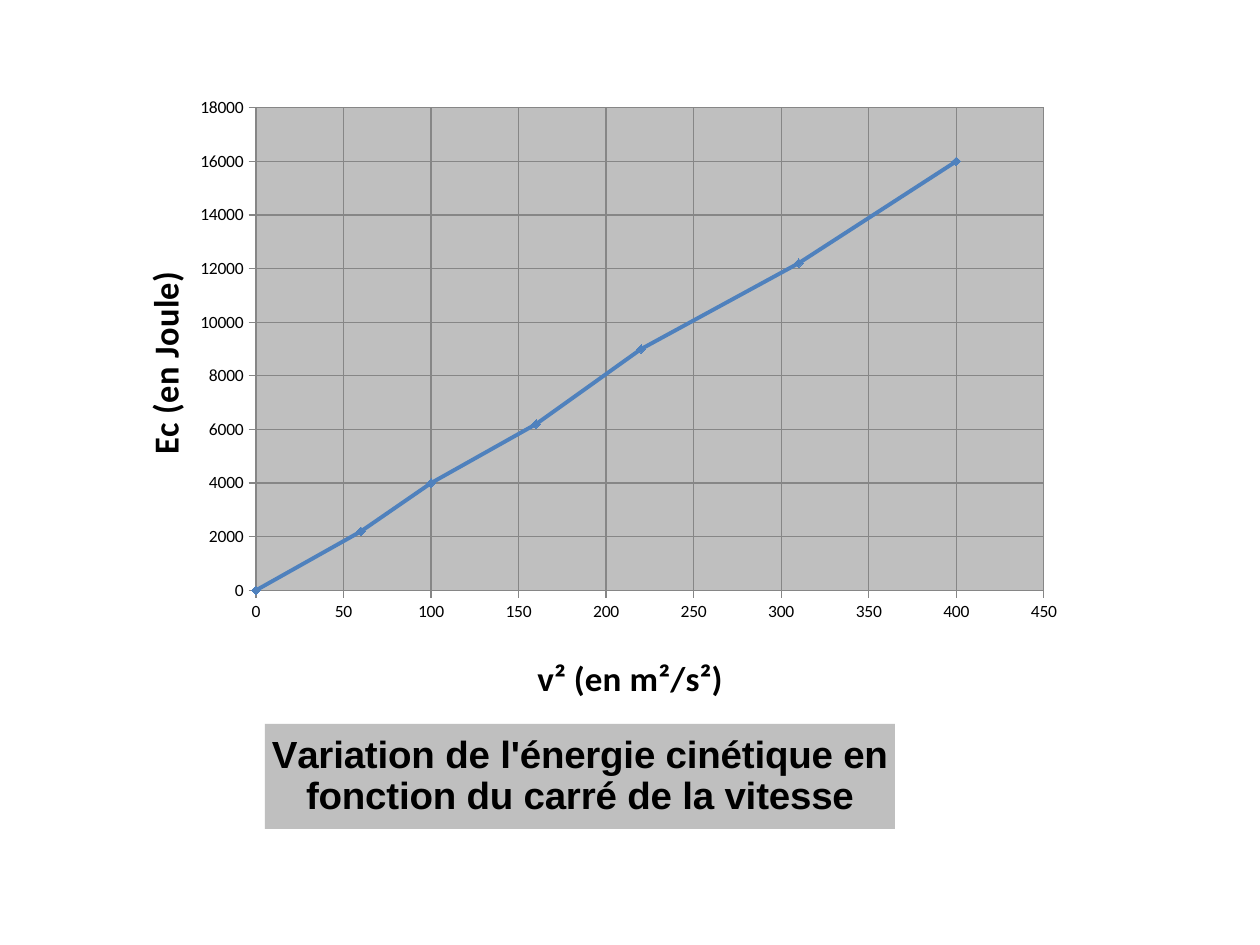
"""Build a slide with a scatter chart of kinetic energy against squared speed."""
from dataclasses import dataclass

from lxml import etree
from pptx import Presentation
from pptx.chart.data import XyChartData
from pptx.dml.color import RGBColor
from pptx.enum.chart import XL_CHART_TYPE, XL_MARKER_STYLE, XL_TICK_MARK
from pptx.oxml.ns import qn
from pptx.util import Pt

PX = 914400 // 126
SCATTER_LINES = XL_CHART_TYPE.XY_SCATTER_LINES
DIAMOND = XL_MARKER_STYLE.DIAMOND
TICK_OUTSIDE, TICK_NONE = XL_TICK_MARK.OUTSIDE, XL_TICK_MARK.NONE
COLORS = {"text": "000000", "panel": "BFBFBF", "grid": "868686", "series": "4F81BD"}
CHART_LEFT, CHART_TOP, CHART_WIDTH, CHART_HEIGHT = 134, 45, 948, 784
PLOT_LEFT, PLOT_TOP, PLOT_WIDTH, PLOT_HEIGHT = 256, 109, 788, 492
POINTS = [(0, 0), (60, 2200), (100, 4000), (160, 6200),
          (220, 9000), (310, 12200), (400, 16000)]


@dataclass
class AxisStyle:
    title: str
    maximum: int
    step: int
    left: int
    top: int
    rotation: int


HORIZONTAL = AxisStyle("v² (en m²/s²)", 450, 50, 531, 659, 0)
VERTICAL = AxisStyle("Ec (en Joule)", 18000, 2000, 134, 273, -5400000)


def color(name: str) -> RGBColor:
    return RGBColor.from_string(COLORS[name])


def place(element, index: int, left: int, top: int, **values) -> None:
    layout = element.find(qn("c:layout"))
    if layout is None:
        layout = etree.Element(qn("c:layout"))
        element.insert(index, layout)
    manual = etree.SubElement(layout, qn("c:manualLayout"))
    target = values.pop("layoutTarget", None)
    if target:
        etree.SubElement(manual, qn("c:layoutTarget")).set("val", target)
    values = {"xMode": "edge", "yMode": "edge",
              "x": round((left - CHART_LEFT) / CHART_WIDTH, 4),
              "y": round((top - CHART_TOP) / CHART_HEIGHT, 4), **values}
    for tag, value in values.items():
        etree.SubElement(manual, qn(f"c:{tag}")).set("val", str(value))


def write_title(title, text: str, *, size: int, font: str, left: int, top: int,
                rotation: int = 0) -> None:
    frame = title.text_frame
    frame._txBody.bodyPr.set("rot", str(rotation))
    frame._txBody.bodyPr.set("vert", "horz")
    run = frame.paragraphs[0].add_run()
    run.text = text
    run.font.size, run.font.bold, run.font.name = Pt(size), True, font
    run.font.color.rgb = color("text")
    place(title._element, 1, left, top)


def style_axis(axis, style: AxisStyle) -> None:
    axis.minimum_scale, axis.maximum_scale = 0, style.maximum
    axis.major_unit = style.step
    axis.major_tick_mark, axis.minor_tick_mark = TICK_OUTSIDE, TICK_NONE
    axis.has_major_gridlines = True
    for line in (axis.format.line, axis.major_gridlines.format.line):
        line.color.rgb = color("grid")
        line.width = Pt(0.75)
    axis.tick_labels.number_format = "General"
    axis.tick_labels.number_format_is_linked = False
    write_title(axis.axis_title, style.title, size=20, font="Calibri",
                left=style.left, top=style.top, rotation=style.rotation)


def add_solid_fill(parent, name: str) -> None:
    fill = etree.SubElement(parent, qn("a:solidFill"))
    etree.SubElement(fill, qn("a:srgbClr")).set("val", COLORS[name])


def style_plot_area(chart) -> None:
    plot_area = chart._chartSpace.find(".//" + qn("c:plotArea"))
    place(plot_area, 0, PLOT_LEFT, PLOT_TOP, layoutTarget="inner",
          w=round(PLOT_WIDTH / CHART_WIDTH, 4), h=round(PLOT_HEIGHT / CHART_HEIGHT, 4))
    properties = etree.SubElement(plot_area, qn("c:spPr"))
    add_solid_fill(properties, "panel")
    line = etree.SubElement(properties, qn("a:ln"), w=str(Pt(0.75)))
    add_solid_fill(line, "grid")


def style_series(series) -> None:
    series.smooth = False
    series.format.line.color.rgb = color("series")
    series.format.line.width = Pt(2.25)
    series.marker.style, series.marker.size = DIAMOND, 5
    series.marker.format.fill.solid()
    series.marker.format.fill.fore_color.rgb = color("series")
    series.marker.format.line.color.rgb = color("series")


def add_energy_chart(slide) -> None:
    data = XyChartData()
    energy = data.add_series("Ec")
    for speed_squared, joules in POINTS:
        energy.add_data_point(speed_squared, joules)
    bounds = (CHART_LEFT, CHART_TOP, CHART_WIDTH, CHART_HEIGHT)
    chart = slide.shapes.add_chart(SCATTER_LINES, *(value * PX for value in bounds),
                                   data).chart
    chart.has_legend = False
    chart.font.size, chart.font.name = Pt(10), "Calibri"
    chart.font.color.rgb = color("text")
    chart.plots[0].vary_by_categories = False
    style_series(chart.plots[0].series[0])
    style_axis(chart.category_axis, HORIZONTAL)
    style_axis(chart.value_axis, VERTICAL)
    style_plot_area(chart)
    chart.has_title = True
    title = chart.chart_title
    write_title(title, "Variation de l'énergie cinétique en fonction du carré de la vitesse",
                size=22, font="Arial", left=265, top=737)
    title.format.fill.solid()
    title.format.fill.fore_color.rgb = color("panel")


def main() -> None:
    """Create and save the presentation."""
    presentation = Presentation()
    presentation.slide_width, presentation.slide_height = 1260 * PX, 945 * PX
    slide = presentation.slides.add_slide(presentation.slide_layouts[6])
    add_energy_chart(slide)
    presentation.save("out.pptx")


if __name__ == "__main__":
    main()
